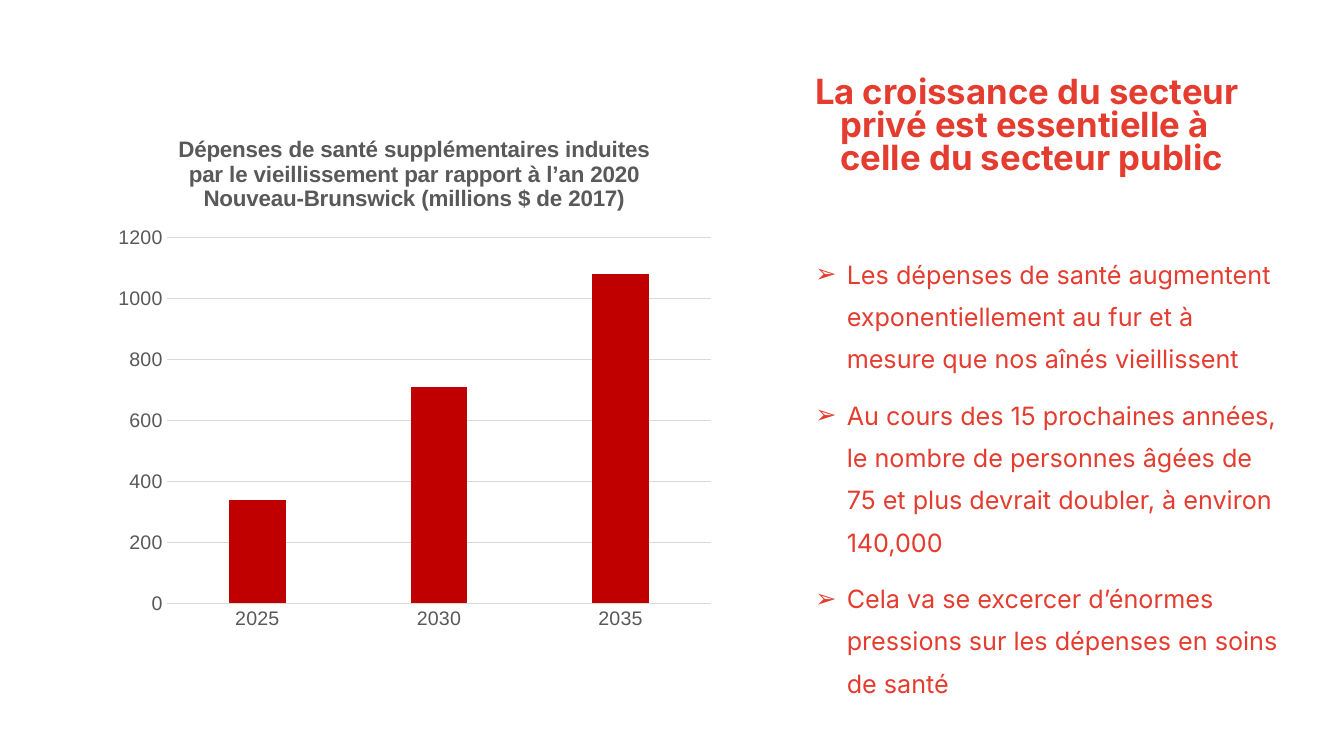
"""Build a slide on ageing-related health spending in New Brunswick."""
from lxml.etree import SubElement
from pptx import Presentation
from pptx.chart.data import CategoryChartData
from pptx.dml.color import RGBColor
from pptx.enum.chart import XL_CHART_TYPE, XL_TICK_MARK
from pptx.enum.text import MSO_ANCHOR
from pptx.oxml import parse_xml
from pptx.oxml.ns import nsdecls, qn
from pptx.util import Cm, Pt

RED = "E43D30"
GREY = "595959"
RULE = "D9D9D9"


def style(font, name, size, color, bold=False):
    font.name, font.size, font.bold = name, Pt(size), bold
    font.color.rgb = RGBColor.from_string(color)


def manual_layout(**parts):
    items = "".join(f'<c:{key} val="{value}"/>' for key, value in parts.items())
    return parse_xml(f'<c:layout {nsdecls("c")}><c:manualLayout>{items}</c:manualLayout></c:layout>')


prs = Presentation()
prs.slide_width, prs.slide_height = Cm(33.87), Cm(19.05)
slide = prs.slides.add_slide(prs.slide_layouts[6])

spending = CategoryChartData(number_format="0")
spending.categories = ["2025", "2030", "2035"]
spending.add_series("Series 1", [340, 710, 1080])
chart = slide.shapes.add_chart(
    XL_CHART_TYPE.COLUMN_CLUSTERED, Cm(2.64), Cm(2.95), Cm(15.6), Cm(13.18), spending
).chart
chart.has_legend = False
style(chart.font, "Arial", 10, "000000")

chart.has_title = True
chart_title = chart.chart_title
chart_title.include_in_layout = False
chart_title.text_frame.text = (
    "Dépenses de santé supplémentaires induites par le vieillissement par rapport à l’an 2020\n"
    "Nouveau-Brunswick (millions $ de 2017)"
)
for line in chart_title.text_frame.paragraphs:
    style(line.runs[0].font, "Arial", 16, GREY, bold=True)

plot = chart.plots[0]
plot.gap_width, plot.overlap, plot.vary_by_categories = 219, -27, False
bars = plot.series[0].format.fill
bars.solid()
bars.fore_color.rgb = RGBColor.from_string("C00000")
plot_area = chart.element.chart.plotArea
for old_layout in plot_area.findall(qn("c:layout")):
    plot_area.remove(old_layout)
plot_area.insert(0, manual_layout(
    layoutTarget="inner", xMode="edge", yMode="edge", x=0.1, y=0.23, w=0.88, h=0.7))

years, millions = chart.category_axis, chart.value_axis
for axis in (years, millions):
    axis.major_tick_mark = axis.minor_tick_mark = XL_TICK_MARK.NONE
    style(axis.tick_labels.font, "Arial", 14, GREY)
millions.minimum_scale, millions.maximum_scale, millions.major_unit = 0, 1200, 200
millions.format.line.fill.background()
millions.has_major_gridlines = True
for rule in (years.format.line, millions.major_gridlines.format.line):
    rule.color.rgb = RGBColor.from_string(RULE)
    rule.width = Pt(0.75)

heading = ["La croissance du secteur privé est essentielle à celle du secteur public"]
arguments = [
    "Les dépenses de santé augmentent exponentiellement au fur et à mesure que nos aînés vieillissent",
    "Au cours des 15 prochaines années, le nombre de personnes âgées de 75 et plus devrait doubler, "
    "à environ 140,000",
    "Cela va se excercer d’énormes pressions sur les dépenses en soins de santé",
]
blocks = [
    (heading, 1.83, 3.3, 24.8, True, 0.8, 1.27, -0.64, None),
    (arguments, 6.1, 12.12, 18, False, 1.4, 1.43, -0.79, "➢"),
]
for texts, top, height, size, bold, spacing, margin, indent, bullet in blocks:
    frame = slide.shapes.add_textbox(Cm(19.66), Cm(top), Cm(12.93), Cm(height)).text_frame
    frame.word_wrap = True
    frame.vertical_anchor = MSO_ANCHOR.TOP
    frame.text = "\n".join(texts)
    for index, paragraph in enumerate(frame.paragraphs):
        paragraph.line_spacing = spacing
        if index:
            paragraph.space_before = Pt(10)
        properties = paragraph._p.get_or_add_pPr()
        properties.set("marL", str(Cm(margin)))
        properties.set("indent", str(Cm(indent)))
        if bullet:
            bullet_color = SubElement(properties, qn("a:buClr"))
            SubElement(bullet_color, qn("a:srgbClr"), val=RED)
            SubElement(properties, qn("a:buFont"), typeface="Arial")
            SubElement(properties, qn("a:buChar"), char=bullet)
        style(paragraph.runs[0].font, "Inter", size, RED, bold)

prs.save("out.pptx")
